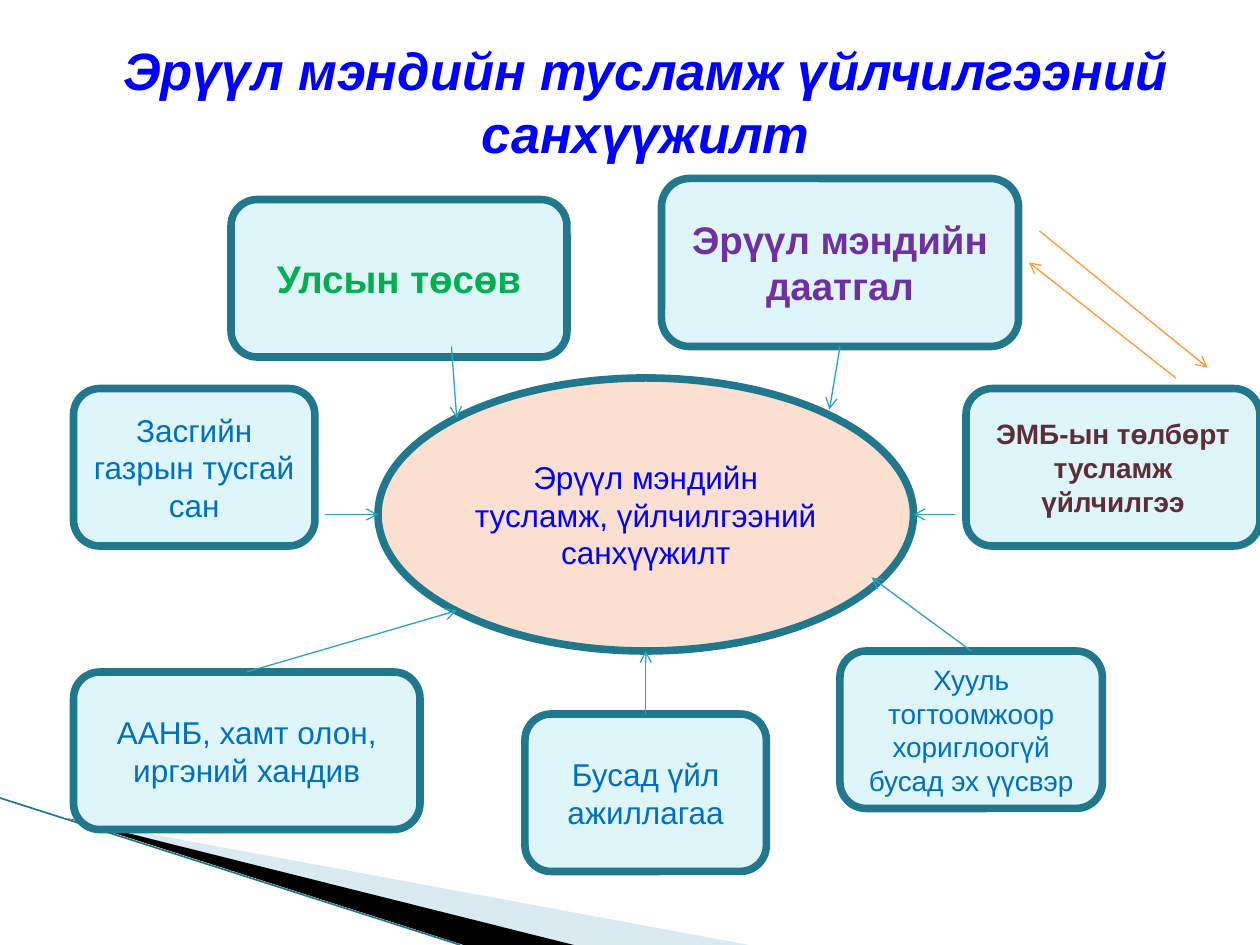
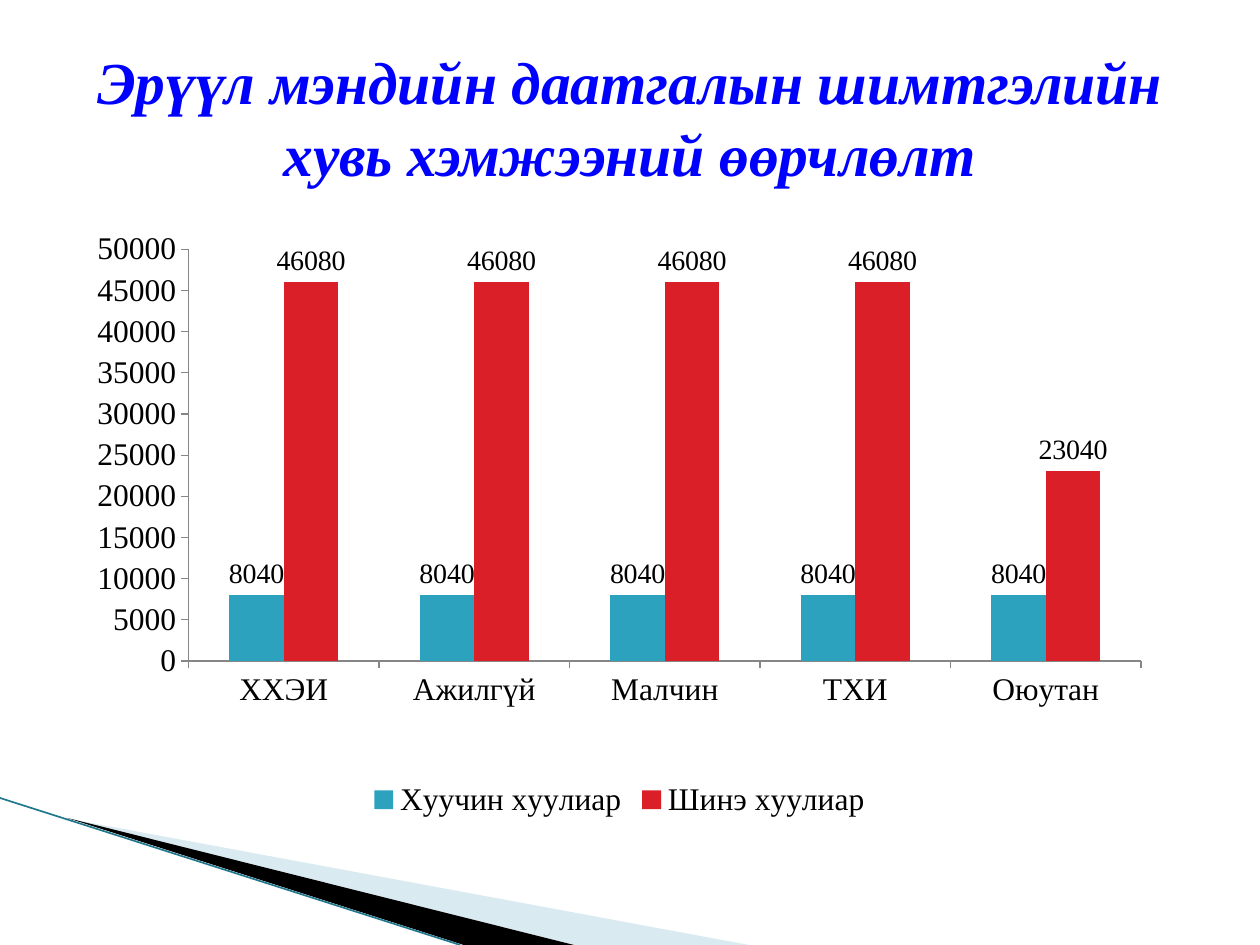
from lxml import etree
from pptx import Presentation
from pptx.chart.data import CategoryChartData
from pptx.dml.color import RGBColor
from pptx.enum.chart import (XL_CHART_TYPE as CHART, XL_LABEL_POSITION as LABEL,
                             XL_LEGEND_POSITION as LEGEND, XL_TICK_MARK as TICK)
from pptx.enum.shapes import MSO_CONNECTOR as CONNECTOR, MSO_SHAPE as SHAPE
from pptx.enum.text import MSO_ANCHOR as ANCHOR, PP_ALIGN as ALIGN
from pptx.oxml import parse_xml
from pptx.oxml.ns import nsdecls, qn
from pptx.util import Pt

SANS, SERIF = "Arial", "Times New Roman"
BLACK = RGBColor(0x00, 0x00, 0x00)
BLUE = RGBColor(0x00, 0x00, 0xFF)
TEXT_BLUE = RGBColor(0x00, 0x70, 0xC0)
GREEN = RGBColor(0x00, 0xB0, 0x50)
PURPLE = RGBColor(0x70, 0x30, 0xA0)
MAROON = RGBColor(0x5E, 0x2D, 0x37)
TEAL = RGBColor(0x2D, 0xA2, 0xBF)
DARK_TEAL = RGBColor(0x21, 0x78, 0x8D)
PALE_TEAL = RGBColor(0xDE, 0xF5, 0xFA)
BAND_BLUE = RGBColor(0xA0, 0xCB, 0xDC)
PEACH = RGBColor(0xFB, 0xE0, 0xD1)
ORANGE = RGBColor(0xFF, 0x99, 0x33)
RED = RGBColor(0xDA, 0x1F, 0x28)
GRAY = RGBColor(0x86, 0x86, 0x86)

SOURCES = [
    ("Улсын төсөв", (132, 114, 192, 90), 22, GREEN, True),
    ("Засгийн газрын тусгай сан", (42, 222, 138, 90), 18, TEXT_BLUE, False),
    ("Бусад үйл ажиллагаа", (300, 408, 138, 90), 18, TEXT_BLUE, False),
    ("ЭМБ-ын төлбөрт тусламж үйлчилгээ", (552, 222, 168, 90), 16, MAROON, True),
    ("ААНБ, хамт олон, иргэний хандив", (42, 384, 198, 90), 18, TEXT_BLUE, False),
    ("Хууль тогтоомжоор хориглоогүй бусад эх үүсвэр", (480, 372, 150, 90), 16,
     TEXT_BLUE, False),
    ("Эрүүл мэндийн даатгал", (378, 102, 204, 96), 22, PURPLE, True),
]
FUNDING_ARROWS = [
    ((186, 294), (216, 294)), ((258, 198), (261, 239)), ((141, 384), (261, 349)),
    ((555, 372), (498, 330)), ((546, 294), (522, 294)), ((480, 198), (474, 234)),
    ((369, 408), (369, 372)),
]
EXCHANGE_ARROWS = [((594, 132), (690, 210)), ((672, 216), (588, 150))]
GROUPS = ["ХХЭИ", "Ажилгүй", "Малчин", "ТХИ", "Оюутан"]
SERIES = [("Хуучин хуулиар", [8040] * 5, TEAL),
          ("Шинэ хуулиар", [46080] * 4 + [23040], RED)]


def set_text(sp, text, size, color, font=SANS, bold=False, italic=False, anchor=ANCHOR.MIDDLE):
    """Write one centred paragraph into a shape."""
    tf = sp.text_frame
    tf.word_wrap = True
    tf.vertical_anchor = anchor
    p = tf.paragraphs[0]
    p.text = text
    p.alignment = ALIGN.CENTER
    p.font.name, p.font.size, p.font.color.rgb = font, Pt(size), color
    p.font.bold, p.font.italic = bold, italic


def add_title(s, text, box, size, font, anchor):
    """Add a bold italic blue slide title."""
    sp = s.shapes.add_textbox(*map(Pt, box))
    set_text(sp, text, size, BLUE, font, True, True, anchor)


def add_node(s, kind, box, fill, text, size, color, bold=False):
    """Add an outlined diagram shape with its label."""
    sp = s.shapes.add_shape(kind, *map(Pt, box))
    sp.shadow.inherit = False
    sp.fill.solid()
    sp.fill.fore_color.rgb = fill
    sp.line.color.rgb = DARK_TEAL
    sp.line.width = Pt(4.33)
    set_text(sp, text, size, color, bold=bold)


def add_line(s, start, end, color, width=0.75, arrow=True):
    """Add a straight line, with an open arrowhead if wanted."""
    line = s.shapes.add_connector(CONNECTOR.STRAIGHT, *map(Pt, start + end))
    line.line.color.rgb = color
    line.line.width = Pt(width)
    if arrow:
        etree.SubElement(line.line._get_or_add_ln(), qn("a:tailEnd"), type="arrow")
    etree.SubElement(line._element.spPr, qn("a:effectLst"))


def add_wedge(s, points, color, alpha=None):
    """Add a filled outline without a border."""
    start, *rest = [(Pt(x), Pt(y)) for x, y in points]
    builder = s.shapes.build_freeform(*start)
    builder.add_line_segments(rest)
    sp = builder.convert_to_shape()
    sp.shadow.inherit = False
    sp.fill.solid()
    sp.fill.fore_color.rgb = color
    sp.line.fill.background()
    if alpha:
        rgb = sp._element.spPr.find(qn("a:solidFill"))[0]
        etree.SubElement(rgb, qn("a:alpha"), val=str(alpha * 1000))


def add_slide(prs):
    """Add a blank slide with the corner wedges."""
    s = prs.slides.add_slide(prs.slide_layouts[6])
    add_wedge(s, [(39.6, 468), (428, 540), (328, 540)], BAND_BLUE, 40)
    add_wedge(s, [(38, 467.3), (328, 540), (265, 540)], BLACK)
    add_line(s, (0, 456), (263, 540), DARK_TEAL, 0.95, False)
    return s


def set_plot_area(chart, x, y, w, h):
    """Fix the inner plot area as fractions of the chart."""
    area = chart._chartSpace.chart.plotArea
    for old in area.findall(qn("c:layout")):
        area.remove(old)
    sizes = "".join(f'<c:{tag} val="{val}"/>' for tag, val in zip("xywh", (x, y, w, h)))
    area.insert(0, parse_xml(
        f'<c:layout {nsdecls("c")}><c:manualLayout><c:layoutTarget val="inner"/>'
        f'<c:xMode val="edge"/><c:yMode val="edge"/>{sizes}</c:manualLayout></c:layout>'))


def add_column_chart(s, box):
    """Add the clustered columns comparing the two laws."""
    data = CategoryChartData()
    data.categories = GROUPS
    for name, values, _ in SERIES:
        data.add_series(name, values)
    chart = s.shapes.add_chart(CHART.COLUMN_CLUSTERED, *map(Pt, box), data).chart
    chart.has_title = False
    chart.font.name, chart.font.size, chart.font.color.rgb = SERIF, Pt(18), BLACK
    chart.has_legend = True
    chart.legend.position = LEGEND.BOTTOM
    chart.legend.include_in_layout = False
    set_plot_area(chart, 0.12, 0.08, 0.84, 0.66)
    for axis in (chart.category_axis, chart.value_axis):
        axis.has_major_gridlines = False
        axis.major_tick_mark = TICK.OUTSIDE
        axis.format.line.color.rgb = GRAY
    chart.value_axis.minimum_scale = 0
    chart.value_axis.maximum_scale = 50000
    chart.value_axis.major_unit = 5000
    plot = chart.plots[0]
    plot.vary_by_categories = False
    plot.gap_width, plot.overlap = 150, 0
    for series, (_, _, color) in zip(plot.series, SERIES):
        series.format.fill.solid()
        series.format.fill.fore_color.rgb = color
        labels = series.data_labels
        labels.show_value = True
        labels.position = LABEL.OUTSIDE_END
        labels.font.name, labels.font.size = SERIF, Pt(16)


def build_funding_slide(prs):
    """Draw the funding sources around the central ellipse."""
    s = add_slide(prs)
    add_node(s, SHAPE.OVAL, (216, 216, 306, 156), PEACH,
             "Эрүүл мэндийн тусламж, үйлчилгээний санхүүжилт", 18, BLUE)
    for text, box, size, color, bold in SOURCES:
        add_node(s, SHAPE.ROUNDED_RECTANGLE, box, PALE_TEAL, text, size, color, bold)
    for start, end in FUNDING_ARROWS:
        add_line(s, start, end, TEAL)
    add_title(s, "Эрүүл мэндийн тусламж үйлчилгээний санхүүжилт",
              (48, 18, 642, 80), 30, SANS, ANCHOR.TOP)
    for start, end in EXCHANGE_ARROWS:
        add_line(s, start, end, ORANGE)


def build_premium_slide(prs):
    """Chart the change in insurance premiums."""
    s = add_slide(prs)
    add_column_chart(s, (30, 114, 648, 356.4))
    add_title(s, "Эрүүл мэндийн даатгалын шимтгэлийн хувь хэмжээний өөрчлөлт",
              (36, 21.6, 648, 90), 34, SERIF, ANCHOR.MIDDLE)


def main():
    """Build and save the presentation."""
    prs = Presentation()
    prs.slide_width, prs.slide_height = Pt(720), Pt(540)
    build_funding_slide(prs)
    build_premium_slide(prs)
    prs.save("out.pptx")


if __name__ == "__main__":
    main()
